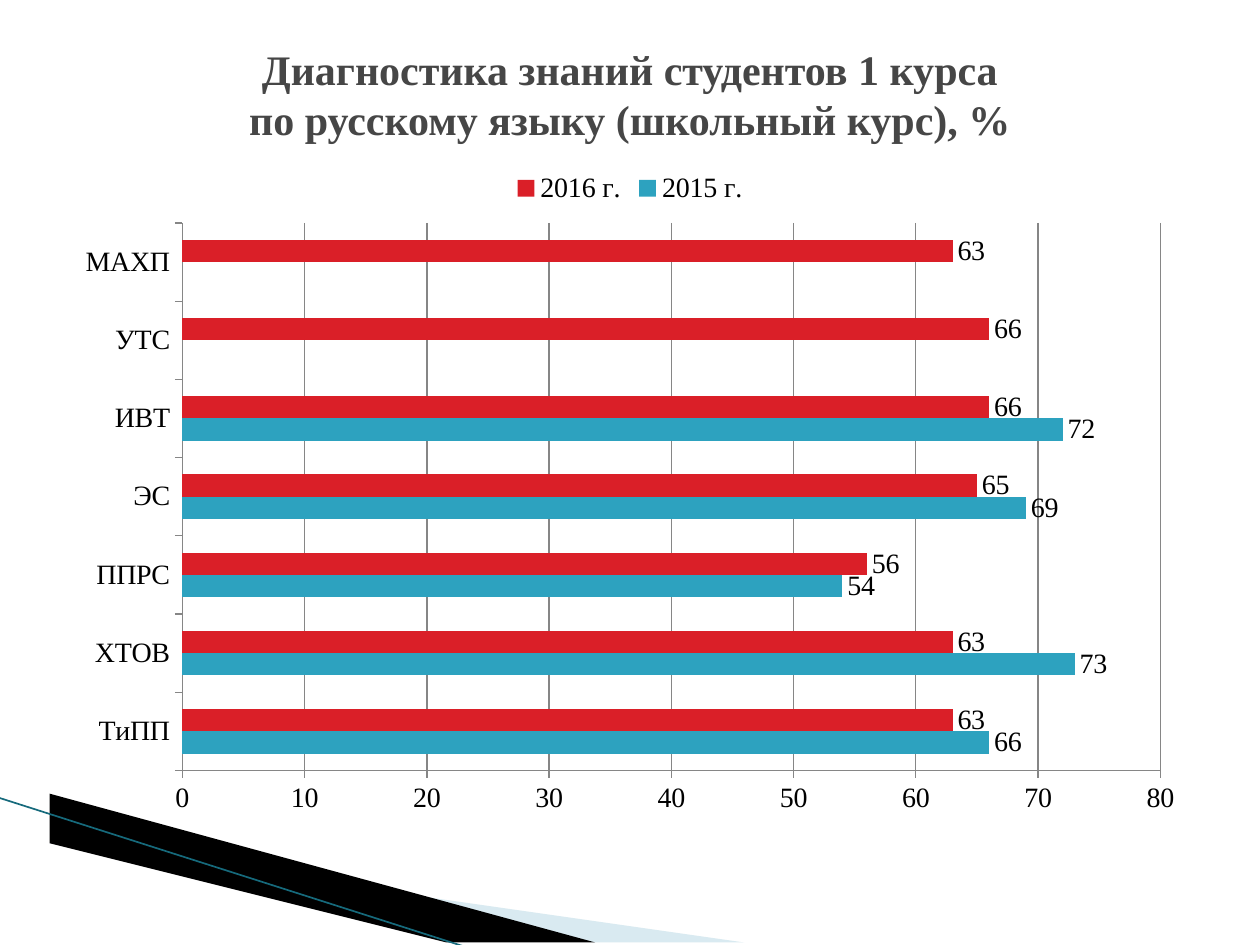
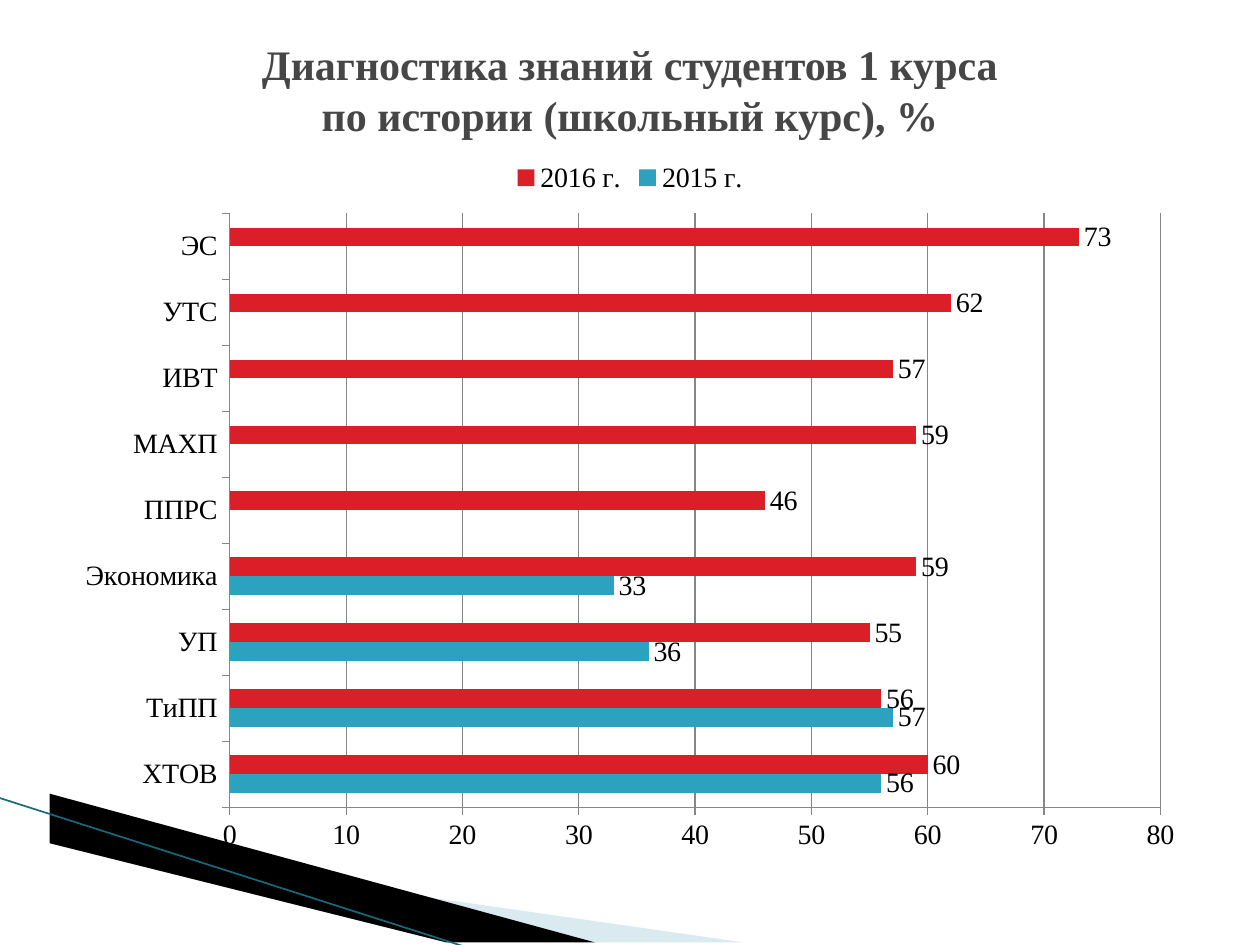
from lxml.etree import SubElement
from pptx import Presentation
from pptx.chart.data import CategoryChartData
from pptx.dml.color import RGBColor
from pptx.enum.chart import XL_CHART_TYPE, XL_LABEL_POSITION, XL_LEGEND_POSITION, XL_TICK_MARK
from pptx.enum.shapes import MSO_CONNECTOR
from pptx.enum.text import MSO_ANCHOR, PP_ALIGN
from pptx.oxml.ns import qn
from pptx.util import Cm, Pt

FONT = "Times New Roman"
COLORS = {
    "title": "464646", "text": "000000", "grid": "868686",
    "2015 г.": "2DA2BF", "2016 г.": "DA1F28",
    "pale": "A0CBDC", "dark": "000000", "edge": "166A7C",
}
YEARS = ("2015 г.", "2016 г.")
LEFT, WIDTH = 1.27, 22.86

# Each row: programme, 2015 score, 2016 score
SLIDES = [
    {
        "title": "Диагностика знаний студентов 1 курса\vпо русскому языку (школьный курс), %",
        "title_height": 2.97, "chart_top": 3.18, "chart_height": 13.51,
        "rows": [
            ("ТиПП", 66, 63), ("ХТОВ", 73, 63), ("ППРС", 54, 56), ("ЭС", 69, 65),
            ("ИВТ", 72, 66), ("УТС", None, 66), ("МАХП", None, 63),
        ],
    },
    {
        "title": "Диагностика знаний студентов 1 курса\vпо истории (школьный курс), %",
        "title_height": 2.77, "chart_top": 2.97, "chart_height": 14.48,
        "rows": [
            ("ХТОВ", 56, 60), ("ТиПП", 57, 56), ("УП", 36, 55), ("Экономика", 33, 59),
            ("ППРС", None, 46), ("МАХП", None, 59), ("ИВТ", None, 57),
            ("УТС", None, 62), ("ЭС", None, 73),
        ],
    },
]

# Corner wedges: colour, opacity in percent, corners in cm
WEDGES = [
    ("pale", 40, [(1.4, 16.54), (15.11, 19.08), (11.58, 19.08), (1.4, 16.51)]),
    ("dark", 100, [(1.35, 16.48), (11.61, 19.08), (9.45, 19.1), (1.37, 16.51)]),
]
EDGE = (-0.03, 16.08, 9.42, 19.1)


def color(name):
    return RGBColor.from_string(COLORS[name])


def set_font(font, size, name, bold=False):
    font.name, font.size, font.bold = FONT, Pt(size), bold
    font.color.rgb = color(name)


def add_corner(slide):
    """Draw the wedges and the thin edge at the lower left."""
    for name, opacity, points in WEDGES:
        pen = slide.shapes.build_freeform(*points[0], scale=Cm(1))
        pen.add_line_segments(points[1:])
        wedge = pen.convert_to_shape()
        wedge.shadow.inherit = False
        wedge.fill.solid()
        wedge.fill.fore_color.rgb = color(name)
        wedge.line.fill.background()
        if opacity < 100:
            tint = wedge.fill._xPr.find(qn("a:solidFill"))[0]
            SubElement(tint, qn("a:alpha"), val=str(opacity * 1000))
    edge = slide.shapes.add_connector(MSO_CONNECTOR.STRAIGHT, *map(Cm, EDGE))
    edge.line.color.rgb = color("edge")
    edge.line.width = Pt(0.95)
    SubElement(edge._element.spPr, qn("a:effectLst"))


def add_title(slide, text, height):
    box = slide.shapes.add_textbox(Cm(LEFT), Cm(0.41), Cm(WIDTH), Cm(height))
    frame = box.text_frame
    frame.word_wrap = True
    frame.vertical_anchor = MSO_ANCHOR.MIDDLE
    line = frame.paragraphs[0]
    line.text = text
    line.alignment = PP_ALIGN.CENTER
    set_font(line.font, 24, "title", True)


def style_axis(axis):
    axis.major_tick_mark = XL_TICK_MARK.OUTSIDE
    axis.minor_tick_mark = XL_TICK_MARK.NONE
    axis.format.line.color.rgb = color("grid")
    axis.format.line.width = Pt(0.75)


def add_scores(slide, rows, top, height):
    names, *scores = zip(*rows)
    data = CategoryChartData()
    data.categories = names
    for year, marks in zip(YEARS, scores):
        data.add_series(year, marks)
    chart = slide.shapes.add_chart(
        XL_CHART_TYPE.BAR_CLUSTERED, Cm(LEFT), Cm(top), Cm(WIDTH), Cm(height), data
    ).chart
    set_font(chart.font, 16, "text")
    chart.has_title = False
    chart.has_legend = True
    chart.legend.position = XL_LEGEND_POSITION.TOP
    chart.legend.include_in_layout = False

    style_axis(chart.category_axis)
    scale = chart.value_axis
    style_axis(scale)
    scale.minimum_scale, scale.maximum_scale, scale.major_unit = 0, 80, 10
    scale.has_major_gridlines = True
    grid = scale.major_gridlines.format.line
    grid.color.rgb = color("grid")
    grid.width = Pt(0.75)

    plot = chart.plots[0]
    plot.vary_by_categories = False
    plot.gap_width, plot.overlap = 150, 0
    for bars in plot.series:
        bars.invert_if_negative = False
        bars.format.fill.solid()
        bars.format.fill.fore_color.rgb = color(bars.name)
        bars.data_labels.show_value = True
        bars.data_labels.position = XL_LABEL_POSITION.OUTSIDE_END


def main():
    deck = Presentation()
    deck.slide_width, deck.slide_height = Cm(25.4), Cm(19.05)
    for page in SLIDES:
        slide = deck.slides.add_slide(deck.slide_layouts[6])
        add_corner(slide)
        add_scores(slide, page["rows"], page["chart_top"], page["chart_height"])
        add_title(slide, page["title"], page["title_height"])
    deck.save("out.pptx")


if __name__ == "__main__":
    main()
